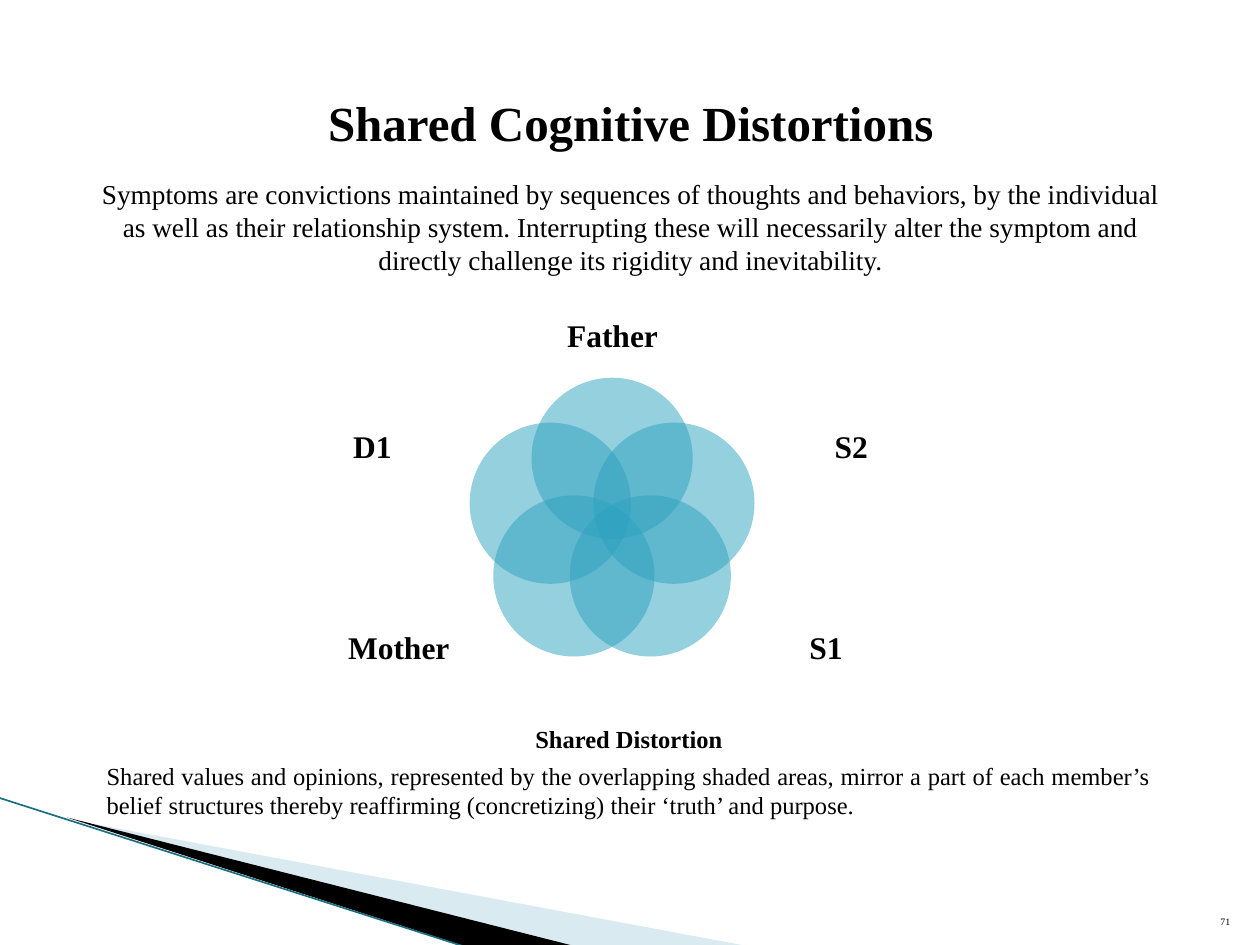
from math import cos, pi, sin

from lxml.etree import SubElement
from pptx import Presentation
from pptx.dml.color import RGBColor
from pptx.enum.shapes import MSO_CONNECTOR, MSO_SHAPE
from pptx.enum.text import MSO_ANCHOR as Anchor, PP_ALIGN as Align
from pptx.oxml.ns import qn
from pptx.util import Cm, Pt

FONT = "Times New Roman"
COLORS = {"ink": "000000", "petal": "2DA2BF", "wedge": "A0CBDC", "edge": "1B6F83"}
CENTER_X, CENTER_Y, ORBIT, DIAMETER = 12.34, 10.55, 1.31, 3.25
MEMBERS = [
    ("Father", 10.46, 5.72, 3.78, 2.18),
    ("S2", 15.47, 7.85, 3.38, 2.36),
    ("S1", 14.96, 11.91, 3.38, 2.36),
    ("Mother", 6.35, 11.91, 3.38, 2.36),
    ("D1", 5.82, 7.85, 3.38, 2.36),
]
INTRO = (
    "Symptoms are convictions maintained by sequences of thoughts and behaviors, "
    "by the individual as well as their relationship system. Interrupting these "
    "will necessarily alter the symptom and directly challenge its rigidity and "
    "inevitability."
)
EXPLANATION = (
    "Shared values and opinions, represented by the overlapping shaded areas, "
    "mirror a part of each member’s belief structures thereby reaffirming "
    "(concretizing) their ‘truth’ and purpose."
)


def paint(shape, color, opacity=100):
    """Give a shape a flat fill without outline or shadow."""
    shape.shadow.inherit = False
    shape.line.fill.background()
    shape.fill.solid()
    shape.fill.fore_color.rgb = RGBColor.from_string(COLORS[color])
    if opacity < 100:
        tint = shape.fill._xPr.find(".//" + qn("a:srgbClr"))
        SubElement(tint, qn("a:alpha")).set("val", str(opacity * 1000))


def add_wedge(slide, points, color, opacity=100):
    """Draw a closed polygon through points given in centimetres."""
    corners = [(Cm(x), Cm(y)) for x, y in points]
    builder = slide.shapes.build_freeform(*corners[0])
    builder.add_line_segments(corners[1:], close=True)
    paint(builder.convert_to_shape(), color, opacity)


def add_edge(slide, start, end):
    """Draw the thin line along the corner wedges."""
    ends = [Cm(value) for value in (*start, *end)]
    edge = slide.shapes.add_connector(MSO_CONNECTOR.STRAIGHT, *ends)
    edge.line.color.rgb = RGBColor.from_string(COLORS["edge"])
    edge.line.width = Pt(0.95)
    SubElement(edge._element.spPr, qn("a:effectLst"))


def style(paragraph, size, bold=False, align=Align.CENTER):
    """Set the font and alignment of a paragraph."""
    paragraph.alignment = align
    for run in paragraph.runs:
        run.font.name = FONT
        run.font.size = Pt(size)
        run.font.bold = bold
        run.font.color.rgb = RGBColor.from_string(COLORS["ink"])


def add_text(slide, box, text, size, bold=False, align=Align.CENTER, anchor=Anchor.TOP):
    """Add a wrapped text box and return its text frame."""
    frame = slide.shapes.add_textbox(*[Cm(value) for value in box]).text_frame
    frame.word_wrap = True
    frame.vertical_anchor = anchor
    frame.text = text
    style(frame.paragraphs[0], size, bold, align)
    return frame


def add_petal(slide, index):
    """Draw one family member's circle at its step around the ring."""
    angle = 2 * pi * index / len(MEMBERS)
    left = CENTER_X + ORBIT * sin(angle) - DIAMETER / 2
    top = CENTER_Y - ORBIT * cos(angle) - DIAMETER / 2
    petal = slide.shapes.add_shape(
        MSO_SHAPE.OVAL, Cm(left), Cm(top), Cm(DIAMETER), Cm(DIAMETER)
    )
    paint(petal, "petal", 50)


def add_member_label(slide, name, *box):
    """Write a family member's name beside its circle."""
    label = add_text(slide, box, name, 18, bold=True, anchor=Anchor.MIDDLE)
    label.margin_left = label.margin_right = label.margin_top = label.margin_bottom = 0
    label.paragraphs[0].line_spacing = 0.9


def add_explanation(slide):
    """Write the heading and paragraph below the diagram."""
    frame = add_text(slide, (1.9, 14.48, 21.56, 2.08), "Shared Distortion", 14, bold=True)
    frame.paragraphs[0].space_after = Pt(4)
    explanation = frame.add_paragraph()
    explanation.text = EXPLANATION
    explanation.space_after = Pt(8)
    style(explanation, 14, align=Align.JUSTIFY)


def main():
    """Build and save the slide."""
    deck = Presentation()
    deck.slide_width, deck.slide_height = Cm(25.4), Cm(19.05)
    slide = deck.slides.add_slide(deck.slide_layouts[6])

    add_wedge(slide, [(1.4, 16.52), (15.11, 19.08), (11.58, 19.08)], "wedge", 40)
    add_wedge(slide, [(1.35, 16.48), (11.61, 19.08), (9.45, 19.1)], "ink")
    add_edge(slide, (-0.03, 16.08), (9.42, 19.1))

    add_text(slide, (24.03, 17.81, 1.02, 1.02), "71", 5.6, align=Align.RIGHT, anchor=Anchor.BOTTOM)
    add_explanation(slide)
    add_text(slide, (4.42, 1.75, 16.59, 1.45), "Shared Cognitive Distortions", 28, bold=True)
    intro = add_text(slide, (1.68, 0, 22.07, 10.44), INTRO, 15.6, anchor=Anchor.MIDDLE)
    intro.margin_bottom = Cm(1.42)

    for index, member in enumerate(MEMBERS):
        add_petal(slide, index)
        add_member_label(slide, *member)
    deck.save("out.pptx")


if __name__ == "__main__":
    main()
